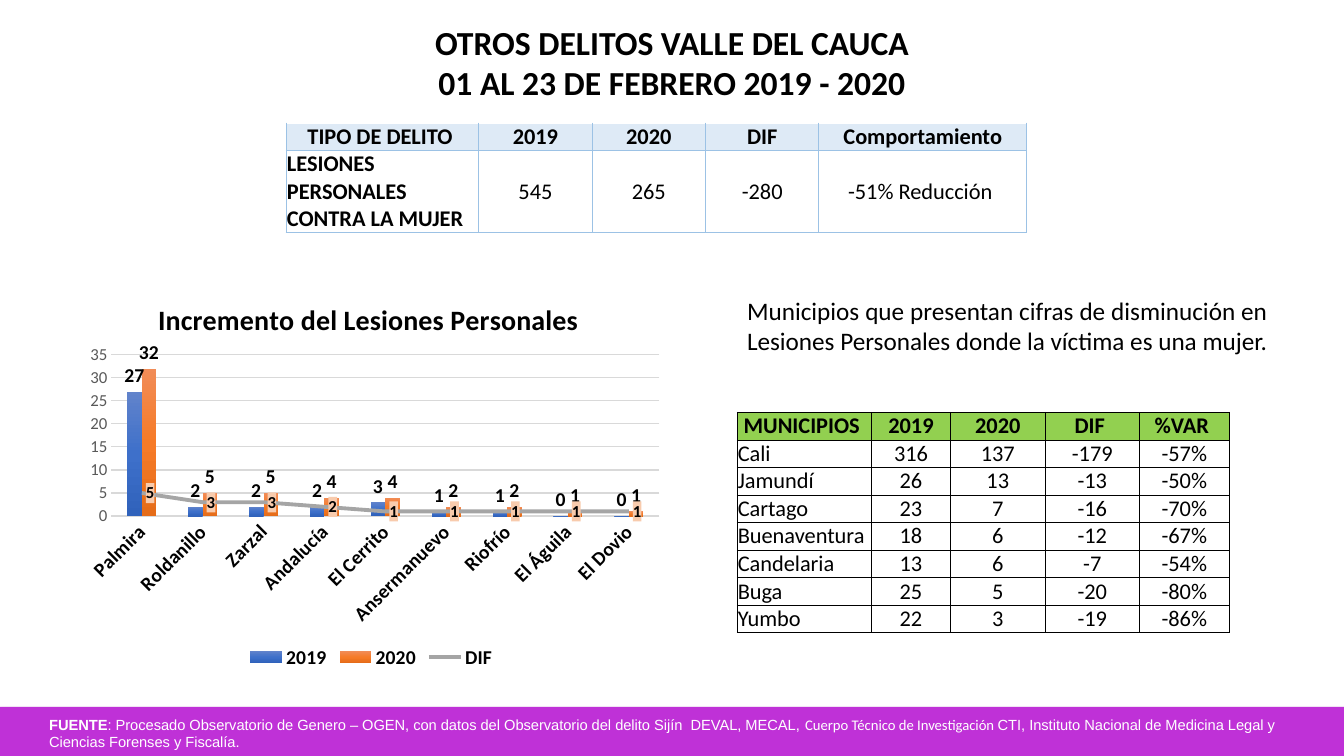
import pptx
import pptx.chart.data
import pptx.dml.color
import pptx.enum.chart
import pptx.enum.shapes
import pptx.enum.text
import pptx.oxml
import pptx.oxml.ns
import pptx.util

Pt = pptx.util.Pt
RGB = pptx.dml.color.RGBColor
ALIGN = pptx.enum.text.PP_ALIGN
ANCHOR = pptx.enum.text.MSO_ANCHOR
LABEL = pptx.enum.chart.XL_LABEL_POSITION
NS = pptx.oxml.ns.nsdecls("a", "c")

BLACK = RGB(0x00, 0x00, 0x00)
WHITE = RGB(0xFF, 0xFF, 0xFF)
PURPLE = RGB(0xBF, 0x31, 0xD7)
PALE_BLUE = RGB(0xDE, 0xEA, 0xF6)
LINE_BLUE = RGB(0x9C, 0xC2, 0xE5)
GREEN = RGB(0x92, 0xD0, 0x50)
GRID = RGB(0xD9, 0xD9, 0xD9)
AXIS_GREY = RGB(0x59, 0x59, 0x59)
TREND_GREY = RGB(0xA5, 0xA5, 0xA5)
PEACH = RGB(0xF8, 0xCB, 0xAD)
BLUE_BARS = (RGB(0x61, 0x83, 0xCB), RGB(0x3E, 0x70, 0xCA), RGB(0x30, 0x62, 0xBB))
ORANGE_BARS = (RGB(0xF1, 0x8C, 0x57), RGB(0xF6, 0x7B, 0x28), RGB(0xE5, 0x6C, 0x19))

CRIMES = [
    ("TIPO DE DELITO ", "2019", "2020", "DIF", "Comportamiento"),
    ("LESIONES PERSONALES CONTRA LA MUJER", "545", "265", "-280", "-51% Reducción "),
]
TOWNS = [
    ("MUNICIPIOS ", "2019", "2020", "DIF ", "%VAR "),
    ("Cali", "316", "137", "-179", "-57%"),
    ("Jamundí", "26", "13", "-13", "-50%"),
    ("Cartago", "23", "7", "-16", "-70%"),
    ("Buenaventura", "18", "6", "-12", "-67%"),
    ("Candelaria", "13", "6", "-7", "-54%"),
    ("Buga", "25", "5", "-20", "-80%"),
    ("Yumbo", "22", "3", "-19", "-86%"),
]
INCREASES = {
    "Palmira": (27, 32, 5), "Roldanillo": (2, 5, 3), "Zarzal": (2, 5, 3),
    "Andalucía": (2, 4, 2), "El Cerrito": (3, 4, 1), "Ansermanuevo": (1, 2, 1),
    "Riofrío": (1, 2, 1), "El Águila": (0, 1, 1), "El Dovio": (0, 1, 1),
}


def xml(text):
    """Parse an element after declaring the namespaces on its first tag."""
    head, tail = text.split(">", 1)
    return pptx.oxml.parse_xml(f"{head} {NS}>{tail}")


def manual_layout(target="", **fractions):
    """Build a chart layout from fractions of the chart area."""
    modes = '<c:xMode val="edge"/><c:yMode val="edge"/>'
    sizes = "".join(f'<c:{k} val="{v}"/>' for k, v in fractions.items())
    return xml(f"<c:layout><c:manualLayout>{target}{modes}{sizes}</c:manualLayout></c:layout>")


def set_layout(parent, layout, before):
    for old in parent.xpath("c:layout"):
        parent.remove(old)
    parent.xpath(before)[0].addprevious(layout)


class Deck:
    def __init__(self):
        self.prs = pptx.Presentation()
        self.prs.slide_width, self.prs.slide_height = Pt(960), Pt(540)
        self.s = self.prs.slides.add_slide(self.prs.slide_layouts[5])

    def font(self, font, size, color=BLACK, bold=False, name="Calibri"):
        font.size, font.bold, font.name = Pt(size), bold, name
        font.color.rgb = color

    def fill_text(self, tf, paragraphs, align):
        """Fill a frame; each paragraph lists (text, font arguments) runs."""
        for i, runs in enumerate(paragraphs):
            p = tf.add_paragraph() if i else tf.paragraphs[0]
            p.alignment = align
            for text, style in runs:
                r = p.add_run()
                r.text = text
                self.font(r.font, **style)

    def title(self, box, lines):
        sp = self.s.shapes.title
        sp.left, sp.top, sp.width, sp.height = map(Pt, box)
        tf = sp.text_frame
        tf.word_wrap, tf.vertical_anchor = True, ANCHOR.TOP
        tf.auto_size = pptx.enum.text.MSO_AUTO_SIZE.NONE
        self.fill_text(tf, [[(t, dict(size=24, bold=True))] for t in lines], ALIGN.CENTER)

    def text(self, box, runs, align=ALIGN.LEFT):
        tf = self.s.shapes.add_textbox(*map(Pt, box)).text_frame
        tf.word_wrap = True
        self.fill_text(tf, [runs], align)

    def band(self, box, color):
        sp = self.s.shapes.add_shape(pptx.enum.shapes.MSO_SHAPE.RECTANGLE, *map(Pt, box))
        sp.fill.solid()
        sp.fill.fore_color.rgb = color
        sp.line.fill.background()
        sp.shadow.inherit = False
        sp.element.spPr.xpath("a:effectLst")[0].append(xml(
            f'<a:outerShdw blurRad="{Pt(3.5)}" dist="{Pt(2.2)}" dir="5400000" rotWithShape="0">'
            '<a:srgbClr val="000000"><a:alpha val="32000"/></a:srgbClr></a:outerShdw>'))

    def table(self, left, top, widths, heights, rows, head_fill, body_fill, anchor,
              border, head_sides="LRTB", bold_first=False):
        frame = self.s.shapes.add_table(len(rows), len(widths), Pt(left), Pt(top),
                                        Pt(sum(widths)), Pt(sum(heights)))
        tb = frame.table
        tb.first_row = tb.horz_banding = False
        for col, width in zip(tb.columns, widths):
            col.width = Pt(width)
        for i, (row, height) in enumerate(zip(rows, heights)):
            tb.rows[i].height = Pt(height)
            for j, text in enumerate(row):
                cell = tb.cell(i, j)
                cell.margin_left = cell.margin_right = Pt(0.5)
                cell.margin_top = cell.margin_bottom = 0
                cell.vertical_anchor = anchor
                bold = i == 0 or (bold_first and j == 0)
                align = ALIGN.LEFT if i and j == 0 else ALIGN.CENTER
                self.fill_text(cell.text_frame, [[(text, dict(size=16, bold=bold))]], align)
                fill = body_fill if i else head_fill
                if fill is None:
                    cell.fill.background()
                else:
                    cell.fill.solid()
                    cell.fill.fore_color.rgb = fill
                self.borders(cell, "LRTB" if i else head_sides, *border)

    def borders(self, cell, sides, color, width):
        tcPr = cell._tc.get_or_add_tcPr()
        for i, side in enumerate(sides):
            tcPr.insert(i, xml(f'<a:ln{side} w="{Pt(width)}"><a:solidFill>'
                               f'<a:srgbClr val="{color}"/></a:solidFill></a:ln{side}>'))

    def chart(self, box, title, data, names):
        """Draw clustered columns with the last series as a line."""
        cd = pptx.chart.data.CategoryChartData()
        cd.categories = list(data)
        for name, values in zip(names, zip(*data.values())):
            cd.add_series(name, values)
        kind = pptx.enum.chart.XL_CHART_TYPE.COLUMN_CLUSTERED
        chart = self.s.shapes.add_chart(kind, *map(Pt, box), cd).chart
        self.font(chart.font, 10)
        self.fill_text(chart.chart_title.text_frame,
                       [[(title, dict(size=20, bold=True))]], ALIGN.CENTER)
        chart.has_legend = True
        chart.legend.position = pptx.enum.chart.XL_LEGEND_POSITION.BOTTOM
        chart.legend.include_in_layout = False
        self.font(chart.legend.font, 14, bold=True)
        self.axes(chart)

        bars = chart.element.xpath(".//c:barChart")[0]
        ser = bars.xpath("c:ser")[-1]
        for flag in ser.xpath("c:invertIfNegative"):
            ser.remove(flag)
        ids = "".join(f'<c:axId val="{v}"/>' for v in bars.xpath("c:axId/@val"))
        line = xml('<c:lineChart><c:grouping val="standard"/><c:varyColors val="0"/>'
                   f'<c:marker val="1"/>{ids}</c:lineChart>')
        line.insert(2, ser)
        bars.addnext(line)

        columns, trend = chart.plots
        columns.gap_width, columns.overlap = 219, 0
        columns.vary_by_categories = False
        for n, (series, shades) in enumerate(zip(columns.series, (BLUE_BARS, ORANGE_BARS)), 1):
            stops = "".join(f'<a:gs pos="{i * 50000}"><a:srgbClr val="{c}"/></a:gs>'
                            for i, c in enumerate(shades))
            series.format.fill.background()
            spPr = bars.xpath(f"c:ser[{n}]/c:spPr")[0]
            spPr.replace(spPr.xpath("a:noFill")[0], xml(
                f'<a:gradFill rotWithShape="1"><a:gsLst>{stops}</a:gsLst>'
                '<a:lin ang="5400000" scaled="0"/></a:gradFill>'))
            self.labels(series, 14, LABEL.OUTSIDE_END)
        diff = trend.series[0]
        diff.smooth = False
        diff.marker.style = pptx.enum.chart.XL_MARKER_STYLE.NONE
        diff.format.line.color.rgb = TREND_GREY
        diff.format.line.width = Pt(2.75)
        self.labels(diff, 12, LABEL.RIGHT)
        line.xpath(".//c:dLbls/c:txPr")[0].addprevious(xml(
            f'<c:spPr><a:solidFill><a:srgbClr val="{PEACH}"><a:alpha val="80000"/>'
            '</a:srgbClr></a:solidFill></c:spPr>'))

        inner = '<c:layoutTarget val="inner"/>'
        set_layout(chart.element.xpath(".//c:plotArea")[0],
                   manual_layout(inner, x=0.06, y=0.21, w=0.92, h=0.4), "c:barChart")
        set_layout(chart.element.xpath("c:chart/c:title")[0],
                   manual_layout(x=0.13, y=0.06), "c:overlay")

    def axes(self, chart):
        cat, val = chart.category_axis, chart.value_axis
        for axis in (cat, val):
            axis.major_tick_mark = axis.minor_tick_mark = pptx.enum.chart.XL_TICK_MARK.NONE
        self.font(cat.tick_labels.font, 14, bold=True)
        chart.element.xpath(".//c:catAx/c:txPr/a:bodyPr")[0].set("rot", "-2700000")
        cat.format.line.color.rgb = GRID
        cat.format.line.width = Pt(1)
        self.font(val.tick_labels.font, 12, AXIS_GREY)
        val.minimum_scale, val.maximum_scale, val.major_unit = 0, 35, 5
        val.format.line.fill.background()
        val.major_gridlines.format.line.color.rgb = GRID
        val.major_gridlines.format.line.width = Pt(0.75)

    def labels(self, series, size, position):
        labels = series.data_labels
        labels.show_value = True
        self.font(labels.font, size, bold=True)
        labels.position = position


def main():
    deck = Deck()
    deck.title((119, 12, 722, 66),
               ["OTROS DELITOS VALLE DEL CAUCA", "01 AL 23 DE FEBRERO 2019 - 2020"])
    deck.table(204.5, 88, (137.5, 81, 81, 81, 148.5), (19.5, 58.5), CRIMES, PALE_BLUE, None,
               ANCHOR.MIDDLE, (LINE_BLUE, 1), head_sides="LRB", bold_first=True)
    deck.band((0, 505, 960, 35), PURPLE)
    source = dict(size=10.5, color=WHITE, name="Arial")
    deck.text((28, 507.5, 904, 32.5), [
        ("FUENTE", dict(source, bold=True)),
        (": Procesado Observatorio de Genero – OGEN, con datos del Observatorio del delito "
         "Sijín  DEVAL, MECAL, ", source),
        ("Cuerpo Técnico de Investigación ", dict(source, name="Calibri")),
        ("CTI, Instituto Nacional de Medicina Legal y Ciencias Forenses y Fiscalía.", source)])
    deck.text((526.5, 207.5, 386, 73), [
        ("Municipios que presentan cifras de disminución en Lesiones Personales donde la "
         "víctima es una mujer.", dict(size=18))], ALIGN.JUSTIFY)
    deck.table(526.5, 294.5, (96, 56.5, 67.5, 67.5, 64), (19.7,) * len(TOWNS), TOWNS, GREEN,
               WHITE, ANCHOR.BOTTOM, (BLACK, 0.5))
    deck.chart((54, 193, 425.5, 288), "Incremento del Lesiones Personales ", INCREASES,
               ("2019", "2020", "DIF "))
    deck.prs.save("out.pptx")


if __name__ == "__main__":
    main()
